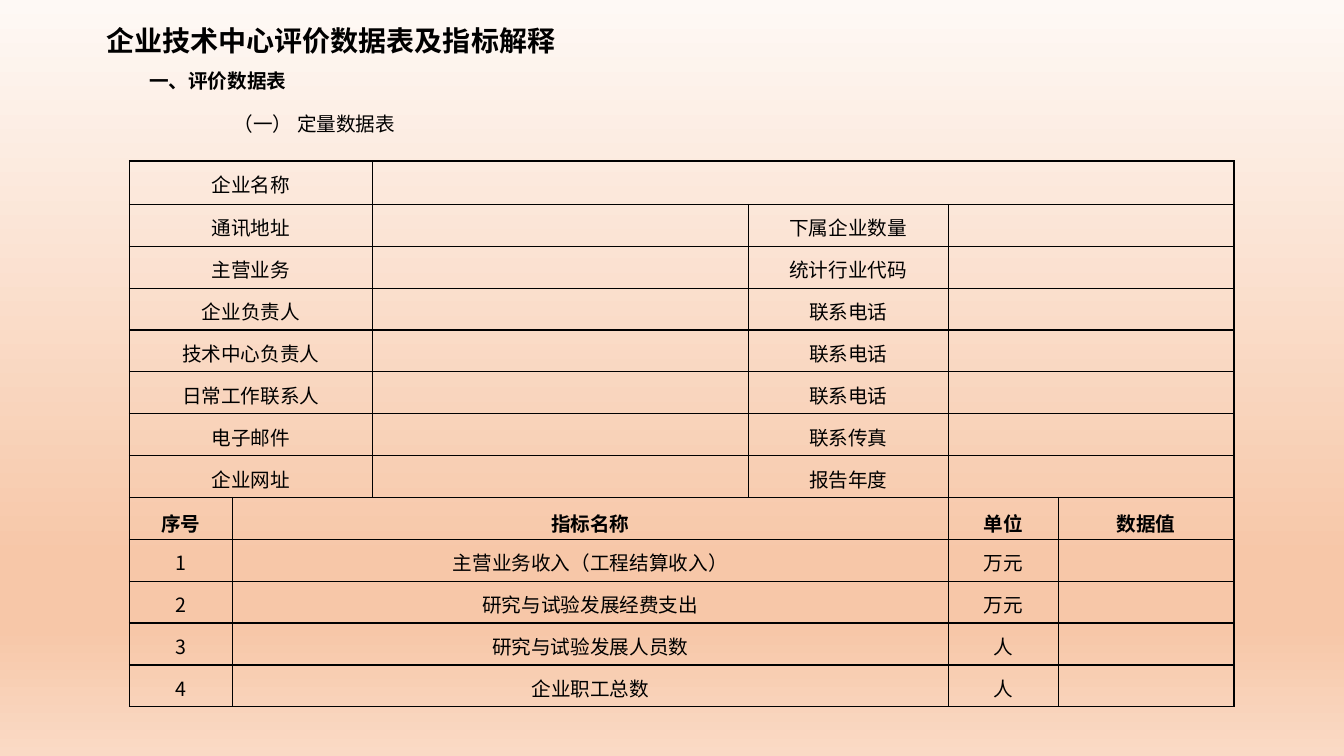
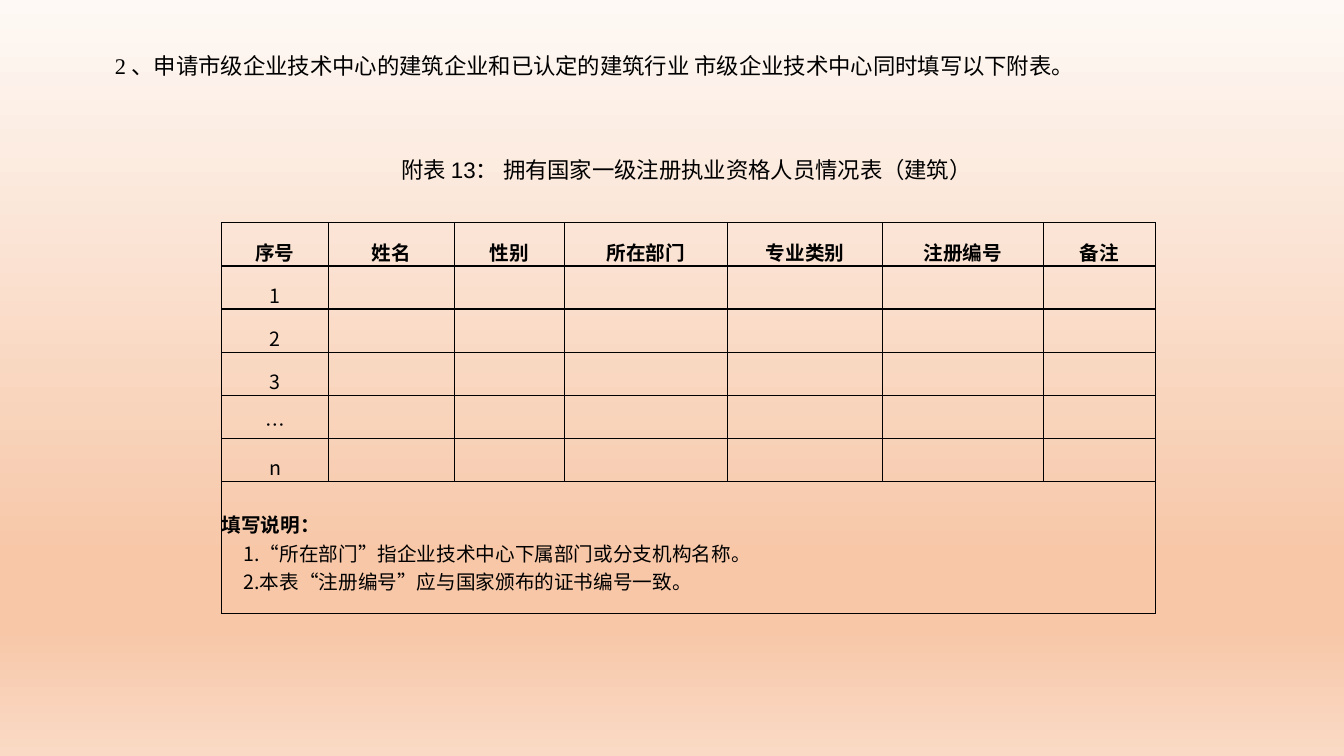
from dataclasses import dataclass
from typing import Optional

from lxml.etree import SubElement
from pptx import Presentation
from pptx.dml.color import RGBColor
from pptx.enum.text import MSO_ANCHOR, PP_ALIGN
from pptx.oxml.ns import qn
from pptx.util import Pt

COLOURS = {"ink": "000000", "cream": "FEF9F5", "peach": "F7C7A8", "sand": "FADAC5"}
BACKGROUND_STOPS = ((0, "cream"), (74, "peach"), (83, "peach"), (100, "sand"))
CHINESE_FONT = "Noto Sans CJK SC"
NO_MARGINS = {"margin_left": 0, "margin_right": 0, "margin_top": 0, "margin_bottom": 0}
BORDER_TAGS = ("a:lnL", "a:lnR", "a:lnT", "a:lnB")
BORDER_WIDTH = 1


@dataclass(frozen=True)
class Span:
    text: str
    size: float = 14
    bold: bool = False
    font: str = CHINESE_FONT


@dataclass(frozen=True)
class Para:
    spans: tuple[Span, ...]
    indent: float = 0
    format: Optional[dict] = None


@dataclass(frozen=True)
class TextBox:
    left: float
    top: float
    width: float
    height: float
    paras: tuple[Para, ...]


@dataclass(frozen=True)
class Grid:
    left: float
    top: float
    columns: tuple[float, ...]
    row_heights: tuple[float, ...]
    rows: tuple[tuple[Optional[str], ...], ...]
    header_row: int
    header_spacing: float
    body_spacing: float


def apply_format(target, values: dict) -> None:
    for name, value in values.items():
        setattr(target, name, value)


def write_paras(frame, paras: tuple[Para, ...]) -> None:
    for index, item in enumerate(paras):
        para = frame.paragraphs[0] if index == 0 else frame.add_paragraph()
        if item.indent:
            para._p.get_or_add_pPr().set("marL", str(Pt(item.indent)))
        apply_format(para, item.format or {})
        for piece in item.spans:
            span = para.add_run()
            span.text = piece.text
            span.font.color.rgb = RGBColor.from_string(COLOURS["ink"])
            apply_format(span.font, {"size": Pt(piece.size), "bold": piece.bold, "name": piece.font})
            SubElement(span._r.get_or_add_rPr(), qn("a:ea"), typeface=CHINESE_FONT)


def add_text(page, spec_box: TextBox) -> None:
    box = page.shapes.add_textbox(
        Pt(spec_box.left), Pt(spec_box.top), Pt(spec_box.width), Pt(spec_box.height)
    )
    box.text_frame.word_wrap = True
    write_paras(box.text_frame, spec_box.paras)


def style_cell(cell) -> None:
    properties = cell._tc.get_or_add_tcPr()
    for tag in BORDER_TAGS:
        line = SubElement(properties, qn(tag), w=str(Pt(BORDER_WIDTH)))
        fill = SubElement(line, qn("a:solidFill"))
        SubElement(fill, qn("a:srgbClr"), val=COLOURS["ink"])
    cell.fill.background()
    apply_format(cell, NO_MARGINS | {"vertical_anchor": MSO_ANCHOR.TOP})


def add_grid(page, grid: Grid):
    table = page.shapes.add_table(
        len(grid.row_heights), len(grid.columns), Pt(grid.left), Pt(grid.top),
        Pt(sum(grid.columns)), Pt(sum(grid.row_heights)),
    ).table
    apply_format(table, {"first_row": False, "horz_banding": False})
    for column, width in zip(table.columns, grid.columns):
        column.width = Pt(width)
    for row, height in zip(table.rows, grid.row_heights):
        row.height = Pt(height)
    for cell in table.iter_cells():
        style_cell(cell)
    for row_index, texts in enumerate(grid.rows):
        is_header = row_index == grid.header_row
        spacing = grid.header_spacing if is_header else grid.body_spacing
        start = 0
        for index, text in enumerate(texts):
            if text is not None:
                start = index
            elif index + 1 == len(texts) or texts[index + 1] is not None:
                table.cell(row_index, start).merge(table.cell(row_index, index))
            if text:
                layout = {"alignment": PP_ALIGN.CENTER, "line_spacing": spacing}
                para = Para((Span(text, bold=is_header),), format=layout)
                write_paras(table.cell(row_index, index).text_frame, (para,))
    return table


def paint_background(master) -> None:
    fill = master.background.fill
    fill.gradient()
    fill.gradient_angle = 270
    stops = next(master.element.iter(qn("a:gsLst")))
    for stop in list(stops):
        stops.remove(stop)
    for position, colour in BACKGROUND_STOPS:
        stop = SubElement(stops, qn("a:gs"), pos=str(position * 1000))
        SubElement(stop, qn("a:srgbClr"), val=COLOURS[colour])


CONTACTS = (
    ("通讯地址", "下属企业数量"),
    ("主营业务", "统计行业代码"),
    ("企业负责人", "联系电话"),
    ("技术中心负责人", "联系电话"),
    ("日常工作联系人", "联系电话"),
    ("电子邮件", "联系传真"),
    ("企业网址", "报告年度"),
)
INDICATORS = (
    ("序号", "指标名称", "单位", "数据值"),
    ("1", "主营业务收入（工程结算收入）", "万元", ""),
    ("2", "研究与试验发展经费支出", "万元", ""),
    ("3", "研究与试验发展人员数", "人", ""),
    ("4", "企业职工总数", "人", ""),
)
DATA_GRID = Grid(
    left=92.5, top=115,
    columns=(73.5, 100, 268.5, 143, 78.5, 125.5),
    row_heights=(31,) + (29.92,) * 12,
    rows=(
        ("企业名称", None, "", None, None, None),
        *((left, None, "", right, "", None) for left, right in CONTACTS),
        *((number, name, None, None, unit, value) for number, name, unit, value in INDICATORS),
    ),
    header_row=8, header_spacing=1.4, body_spacing=1.3,
)
STAFF_HEADERS = ("序号", "姓名", "性别", "所在部门", "专业类别", "注册编号", "备注")
STAFF_GRID = Grid(
    left=158.2, top=159.2,
    columns=(76.5, 90, 78.5, 116.5, 111, 114.5, 80),
    row_heights=(30.8,) * 6 + (94.4,),
    rows=(
        STAFF_HEADERS,
        *((number,) + ("",) * 6 for number in ("1", "2", "3", "…", "n")),
        ("",) + (None,) * 6,
    ),
    header_row=0, header_spacing=1.5, body_spacing=1.5,
)
STAFF_NOTES = (
    Para((Span("填写说明：", bold=True),)),
    Para((Span("1.“所在部门”指企业技术中心下属部门或分支机构名称。"),), indent=15.7),
    Para((Span("2.本表“注册编号”应与国家颁布的证书编号一致。"),), indent=15.7),
)


def build_data_page(page) -> None:
    title = Span("企业技术中心评价数据表及指标解释", size=20, bold=True)
    add_text(page, TextBox(69, 13.5, 521, 36, (Para((title,)),)))
    headings = (
        Para((Span("一、评价数据表", bold=True),)),
        Para((Span("（一） 定量数据表"),), indent=60.5, format={"space_before": Pt(13.5)}),
    )
    add_text(page, TextBox(99.4, 45.8, 288, 61, headings))
    add_grid(page, DATA_GRID)


def build_staff_page(page) -> None:
    instruction = (
        Span("2 ", size=16, font="Times New Roman"),
        Span(
            "、申请市级企业技术中心的建筑企业和已认定的建筑行业 市级企业技术中心同时填写以下附表。",
            size=16, font="Arial",
        ),
    )
    add_text(page, TextBox(75, 34, 719, 32, (Para(instruction),)))
    table = add_grid(page, STAFF_GRID)
    notes_cell = table.cell(6, 0)
    notes_cell.margin_top = Pt(20.3)
    write_paras(notes_cell.text_frame, STAFF_NOTES)
    caption = Span("附表 13： 拥有国家一级注册执业资格人员情况表（建筑）", size=16, font="Arial")
    add_text(page, TextBox(279.5, 108, 440, 32, (Para((caption,)),)))


def main() -> None:
    """Build the two evaluation form slides and save the deck."""
    deck = Presentation()
    apply_format(deck, {"slide_width": Pt(960), "slide_height": Pt(540)})
    paint_background(deck.slide_master)
    for build in (build_data_page, build_staff_page):
        build(deck.slides.add_slide(deck.slide_layouts[6]))
    deck.save("out.pptx")


if __name__ == "__main__":
    main()
